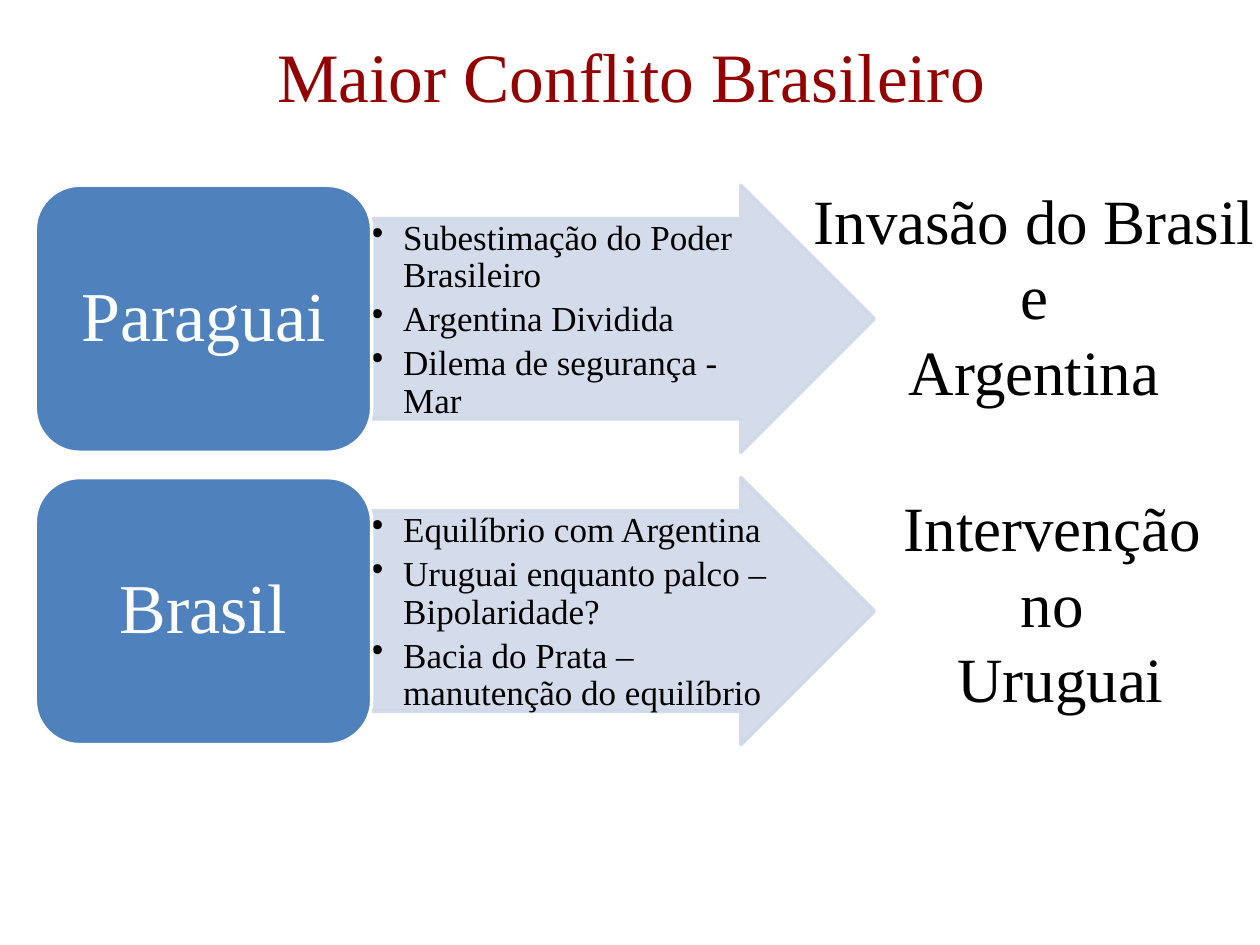
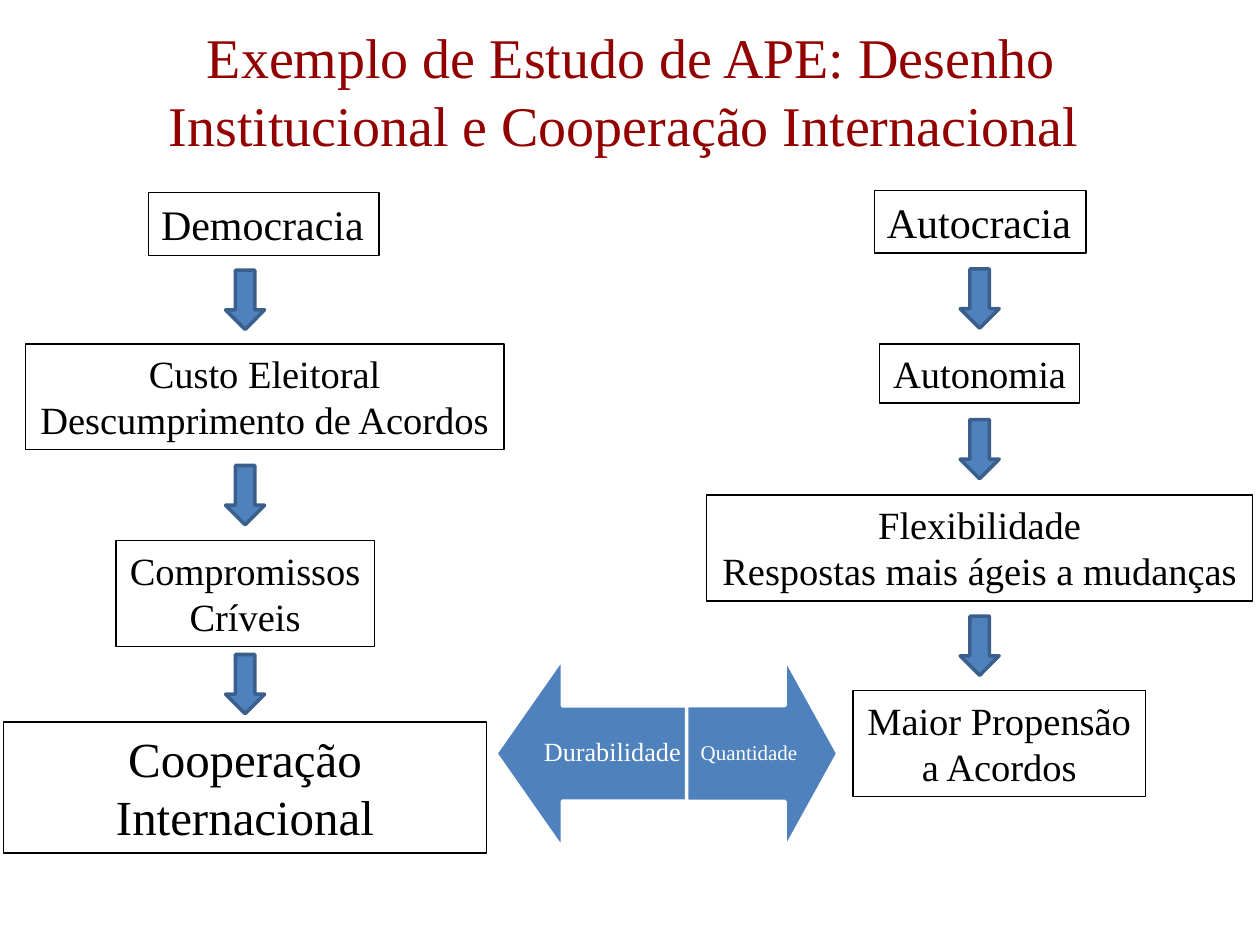
from itertools import pairwise

from lxml import etree
from pptx import Presentation
from pptx.dml.color import RGBColor
from pptx.enum.shapes import MSO_SHAPE as Kind
from pptx.enum.text import MSO_ANCHOR as Anchor, MSO_AUTO_SIZE as Fit, PP_ALIGN as Align
from pptx.oxml.ns import qn
from pptx.util import Inches, Pt

rgb = RGBColor.from_string
FONT = "Times New Roman"
RED, BLUE, NAVY, PALE = "920000", "4F81BD", "3A5F8C", "D0D8E8"
BLACK, WHITE = "000000", "FFFFFF"
TITLE_ONLY = 5


def put(slide, kind, box, fill=None, line=BLACK, line_width=2, rotation=0):
    """Add a preset shape, or a text box when kind is None; box is in inches."""
    box = [Inches(length) for length in box]
    if kind is None:
        return slide.shapes.add_textbox(*box)
    shape = slide.shapes.add_shape(kind, *box)
    shape.shadow.inherit = False
    shape.rotation = rotation
    if fill:
        shape.fill.solid()
        shape.fill.fore_color.rgb = rgb(fill)
    else:
        shape.fill.background()
    shape.line.color.rgb = rgb(line)
    shape.line.width = Pt(line_width)
    return shape


def write(shape, lines, size, color=BLACK, margins=(0.1, 0.05), paragraph_format=None, **frame_format):
    """Write one paragraph per line; margins are horizontal and vertical inches."""
    frame = shape.text_frame
    across, down = map(Inches, margins)
    frame_values = {
        "word_wrap": True, "auto_size": Fit.NONE, "vertical_anchor": Anchor.TOP,
        "margin_left": across, "margin_right": across,
        "margin_top": down, "margin_bottom": down,
    } | frame_format
    for name, value in frame_values.items():
        setattr(frame, name, value)
    frame.text = "\n".join(lines)
    for paragraph in frame.paragraphs:
        for name, value in ({"alignment": Align.CENTER} | (paragraph_format or {})).items():
            setattr(paragraph, name, value)
        font = paragraph.runs[0].font
        for name, value in {"name": FONT, "size": Pt(size)}.items():
            setattr(font, name, value)
        font.color.rgb = rgb(color)


prs = Presentation()
prs.slide_width, prs.slide_height = Inches(10), Inches(7.5)

titles = [
    ("Maior Conflito Brasileiro", 39.6, 0.77),
    ("Exemplo de Estudo de APE: Desenho Institucional e Cooperação Internacional ", 32, 1.01),
]
slides = []
for wording, size, height in titles:
    slide = prs.slides.add_slide(prs.slide_layouts[TITLE_ONLY])
    title = slide.shapes.title
    title.left, title.top, title.width, title.height = map(Inches, (0.51, 0.21, 9, height))
    write(title, [wording], size, RED, vertical_anchor=Anchor.MIDDLE)
    slides.append(slide)
conflict, design = slides

# Countries, their reasons and the outcome
COUNTRY_LEFT, COUNTRY_WIDTH, REASONS_LEFT = 0.28, 2.67, 2.94
FIRST_ROW, ROW_STEP, ROW_HEIGHT = 1.47, 2.32, 2.12
countries = [
    ("Paraguai",
     ["Subestimação do Poder Brasileiro", "Argentina Dividida", "Dilema de segurança - Mar"],
     ["Invasão do Brasil ", "e ", "Argentina "], (6.34, 1.39, 3.86, 1.92)),
    ("Brasil",
     ["Equilíbrio com Argentina", "Uruguai enquanto palco – Bipolaridade?",
      "Bacia do Prata – manutenção do equilíbrio"],
     ["Intervenção ", "no ", "Uruguai"], (7.06, 3.83, 2.71, 1.92)),
]
for row, (country, reasons, outcome, outcome_box) in enumerate(countries):
    top = FIRST_ROW + row * ROW_STEP
    arrow = put(conflict, Kind.RIGHT_ARROW, (REASONS_LEFT, top, 4, ROW_HEIGHT), PALE, PALE)
    arrow.adjustments[0] = 0.75
    for color in arrow._element.spPr.iter(qn("a:srgbClr")):
        etree.SubElement(color, qn("a:alpha"), val="90000")

    reason_list = put(conflict, None, (REASONS_LEFT, top + 0.265, 3.21, 1.59))
    write(reason_list, reasons, 20, margins=(0.01, 0.01), paragraph_format={
        "alignment": Align.LEFT, "level": 1, "line_spacing": 0.9, "space_after": Pt(3.5)})
    for paragraph in reason_list.text_frame.paragraphs:
        properties = paragraph._p.get_or_add_pPr()
        properties.set("marL", str(Inches(0.25)))
        properties.set("indent", str(-Inches(0.25)))
        etree.SubElement(properties, qn("a:buChar"), char="•")

    name_plate = put(conflict, Kind.ROUNDED_RECTANGLE,
                     (COUNTRY_LEFT, top, COUNTRY_WIDTH, ROW_HEIGHT), BLUE, WHITE)
    write(name_plate, [country], 40, WHITE, vertical_anchor=Anchor.MIDDLE,
          paragraph_format={"line_spacing": 0.9})
    write(put(conflict, None, outcome_box), outcome, 36,
          word_wrap=False, auto_size=Fit.SHAPE_TO_FIT_TEXT)

# Two chains of steps: axis, then (centre, top, width, height, size, lines)
STEP_ARROW_LENGTH, STEP_ARROW_WIDTH = 0.47, 0.31
chains = [
    (1.945, [
        (2.095, 1.53, 1.83, 0.5, 24, ["Democracia"]),
        (2.1, 2.73, 3.8, 0.84, 22, ["Custo Eleitoral", "Descumprimento de Acordos"]),
        (1.945, 4.29, 2.05, 0.84, 22, ["Compromissos", "Críveis"]),
        (1.945, 5.73, 3.83, 1.04, 28, ["Cooperação Internacional"]),
    ]),
    (7.775, [
        (7.78, 1.51, 1.68, 0.5, 24, ["Autocracia"]),
        (7.775, 2.73, 1.59, 0.47, 22, ["Autonomia"]),
        (7.775, 3.93, 4.33, 0.84, 22, ["Flexibilidade", "Respostas mais ágeis a mudanças"]),
        (7.93, 5.48, 2.32, 0.84, 22, ["Maior Propensão", "a Acordos"]),
    ]),
]
for axis, steps in chains:
    for centre, top, width, height, size, lines in steps:
        step = put(design, Kind.RECTANGLE, (centre - width / 2, top, width, height), line_width=0.75)
        write(step, lines, size, word_wrap=size == 28, auto_size=Fit.SHAPE_TO_FIT_TEXT,
              paragraph_format={"alignment": Align.LEFT if size == 24 else Align.CENTER})
    for (_, top, _, height, *_), (_, next_top, *_) in pairwise(steps):
        middle = (top + height + next_top) / 2
        put(design, Kind.RIGHT_ARROW,
            (axis - STEP_ARROW_LENGTH / 2, middle - STEP_ARROW_WIDTH / 2,
             STEP_ARROW_LENGTH, STEP_ARROW_WIDTH), BLUE, NAVY, rotation=90)

# Opposed arrows between the ends of the chains
qualities = [
    ("Durabilidade", 15, 270, (3.98, 5.18, 1.51, 1.6), (4.19, 5.6, 1.34, 0.75), 0.12),
    ("Quantidade", 12, 90, (5.29, 5.38, 1.52, 1.2), (5.45, 5.6, 0.99, 0.76), 0.09),
]
for quality, size, rotation, arrow_box, label_box, margin in qualities:
    arrow = put(design, Kind.UP_ARROW, arrow_box, BLUE, WHITE, rotation=rotation)
    arrow.adjustments[1] = 0.35
    write(put(design, None, label_box), [quality], size, WHITE, (margin, margin),
          {"line_spacing": 0.9}, vertical_anchor=Anchor.MIDDLE)

prs.save("out.pptx")
